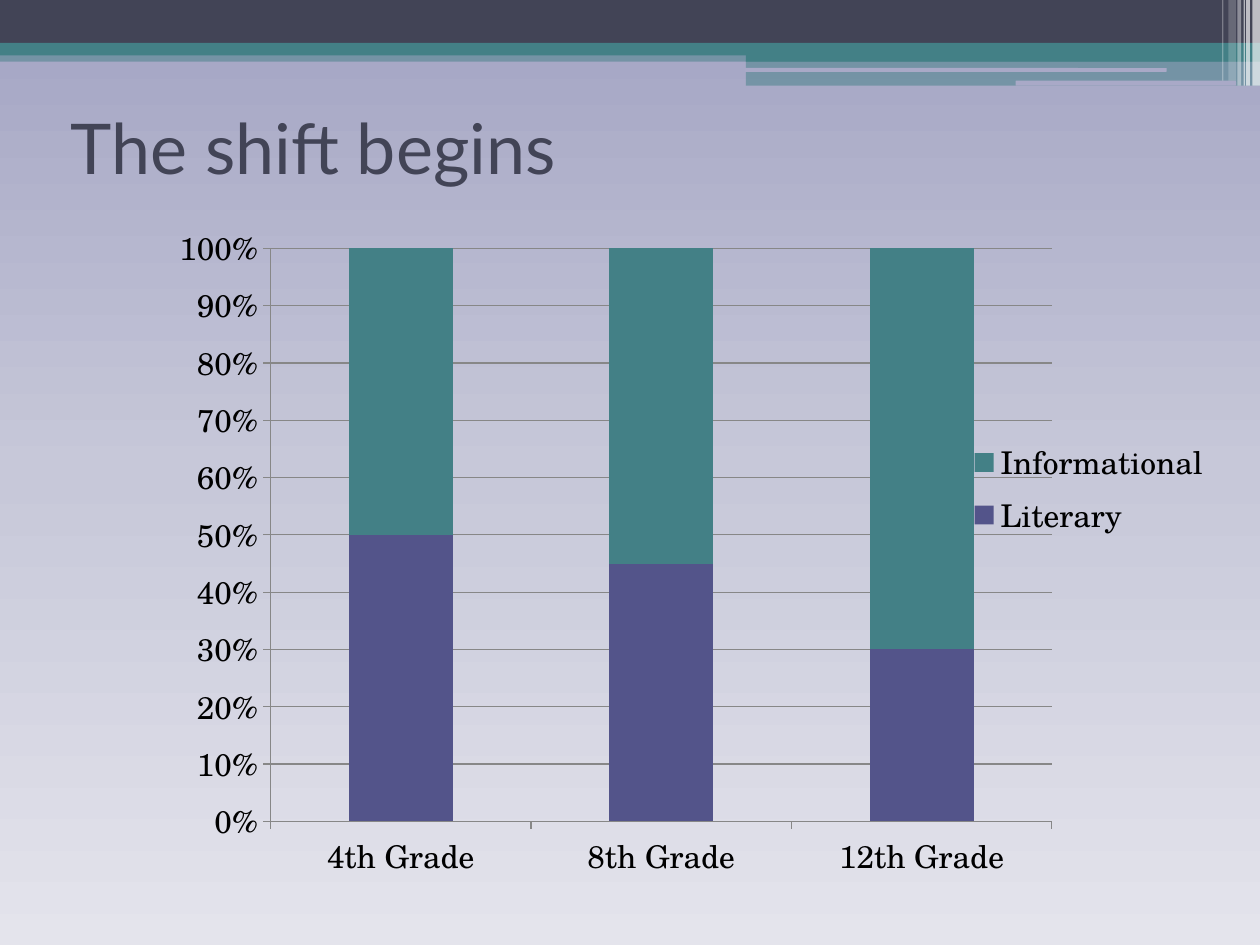
from copy import deepcopy

from lxml import etree
from pptx import Presentation
from pptx.chart.data import CategoryChartData
from pptx.dml.color import RGBColor
from pptx.enum.chart import XL_CHART_TYPE, XL_LEGEND_POSITION, XL_TICK_MARK
from pptx.enum.shapes import MSO_SHAPE
from pptx.enum.text import MSO_ANCHOR, PP_ALIGN
from pptx.oxml.ns import qn
from pptx.util import Inches, Pt

RECT, ROUND = MSO_SHAPE.RECTANGLE, MSO_SHAPE.ROUNDED_RECTANGLE
STACKED = XL_CHART_TYPE.COLUMN_STACKED_100
RIGHT = XL_LEGEND_POSITION.RIGHT
OUTSIDE = XL_TICK_MARK.OUTSIDE
LEFT, MIDDLE = PP_ALIGN.LEFT, MSO_ANCHOR.MIDDLE

COLORS = {
    "top": "A3A4C3", "mid": "C7C8D9", "low": "E4E4EC", "gap": "A9A9C7",
    "dark": "424456", "teal": "438086", "violet": "53548A",
    "white": "FFFFFF", "black": "000000", "grid": "878787",
}

# Left, top, width, height, color, opacity in percent
BANDS = [
    (0, 0.4, 10, 0.09, "teal", 50),
    (0, 0, 10, 0.34, "dark", 100),
    (0, 0.34, 10, 0.1, "teal", 100),
    (5.92, 0.39, 4.08, 0.1, "teal", 100),
    (5.92, 0.48, 4.08, 0.2, "teal", 50),
]
GAPS = [(5.91, 0.54, 3.35, 0.03), (8.06, 0.64, 1.75, 0.04)]
# Left, width, height, opacity in percent
STRIPES = [
    (9.94, 0.06, 0.68, 65), (9.89, 0.03, 0.68, 65), (9.87, 0.01, 0.68, 60),
    (9.82, 0.03, 0.68, 40), (9.75, 0.06, 0.64, 20), (9.7, 0.01, 0.64, 30),
]

GRADES = ["4th Grade", "8th Grade", "12th Grade"]
SERIES = [
    ("Literary", (50, 45, 30), "violet"),
    ("Informational", (50, 55, 70), "teal"),
]


def rgb(name):
    return RGBColor.from_string(COLORS[name])


def set_back(slide):
    fill = slide.background.fill
    fill.gradient()
    fill.gradient_angle = 270
    first = next(slide.element.iter(qn("a:gs")))
    first.addnext(deepcopy(first))
    for stop, name, place in zip(fill.gradient_stops,
                                 ("top", "mid", "low"), (0, 0.5, 1)):
        stop.color.rgb = rgb(name)
        stop.position = place


def add_bar(slide, left, top, width, height, color, opacity=100, kind=RECT):
    bar = slide.shapes.add_shape(
        kind, Inches(left), Inches(top), Inches(width), Inches(height))
    bar.shadow.inherit = False
    bar.line.fill.background()
    bar.fill.solid()
    bar.fill.fore_color.rgb = rgb(color)
    if opacity < 100:
        tint = next(bar.element.spPr.iter(qn("a:srgbClr")))
        etree.SubElement(tint, qn("a:alpha"), val=str(opacity * 1000))


def set_title(slide, text):
    title = slide.shapes.title
    title.left, title.top = Inches(0.46), Inches(0.58)
    title.width, title.height = Inches(9), Inches(1.17)
    frame = title.text_frame
    frame.text = text
    frame.vertical_anchor = MIDDLE
    para = frame.paragraphs[0]
    para.alignment = LEFT
    font = para.runs[0].font
    font.name, font.size = "Lato", Pt(40)
    font.color.rgb = rgb("dark")


def set_place(part, x, y, w, h, inner=False):
    """Fix a chart part at fractions of the chart area."""
    for old in part.findall(qn("c:layout")):
        part.remove(old)
    layout = etree.Element(qn("c:layout"))
    manual = etree.SubElement(layout, qn("c:manualLayout"))
    items = [("layoutTarget", "inner")] if inner else []
    items += [("xMode", "edge"), ("yMode", "edge"),
              ("x", x), ("y", y), ("w", w), ("h", h)]
    for tag, val in items:
        etree.SubElement(manual, qn("c:" + tag), val=str(val))
    # The layout comes first in a plot area, after the position in a legend
    spot = part.find(qn("c:legendPos"))
    if spot is None:
        part.insert(0, layout)
    else:
        spot.addnext(layout)


def add_graph(slide):
    data = CategoryChartData()
    data.categories = GRADES
    for name, vals, _ in SERIES:
        data.add_series(name, vals)
    chart = slide.shapes.add_chart(
        STACKED, Inches(1.31), Inches(1.71), Inches(8.38), Inches(5.27),
        data).chart
    chart.has_title = False
    chart.font.name, chart.font.size = "TeX Gyre Schola", Pt(18)
    chart.font.color.rgb = rgb("black")

    # Columns
    plot = chart.plots[0]
    plot.gap_width, plot.overlap = 150, 100
    plot.vary_by_categories = False
    for series, (_, _, color) in zip(plot.series, SERIES):
        series.format.fill.solid()
        series.format.fill.fore_color.rgb = rgb(color)

    # Axes and grid
    scale = chart.value_axis
    scale.minimum_scale, scale.maximum_scale, scale.major_unit = 0, 1, 0.1
    scale.has_major_gridlines = True
    scale.tick_labels.number_format = "0%"
    scale.tick_labels.number_format_is_linked = False
    for axis in (scale, chart.category_axis):
        axis.major_tick_mark = OUTSIDE
    for part in (scale, chart.category_axis, scale.major_gridlines):
        part.format.line.color.rgb = rgb("grid")
        part.format.line.width = Pt(0.75)

    # Legend and layout
    chart.has_legend = True
    legend = chart.legend
    legend.position = RIGHT
    legend.include_in_layout = False
    area = next(chart.element.iter(qn("c:plotArea")))
    set_place(area, 0.1, 0.05, 0.74, 0.87, inner=True)
    set_place(next(chart.element.iter(qn("c:legend"))), 0.76, 0.33, 0.23, 0.17)


def main():
    prs = Presentation()
    prs.slide_width, prs.slide_height = Inches(10), Inches(7.5)
    slide = prs.slides.add_slide(prs.slide_layouts[5])
    set_back(slide)

    # Header bands, gaps and corner stripes
    for band in BANDS:
        add_bar(slide, *band)
    for gap in GAPS:
        add_bar(slide, *gap, "gap", kind=ROUND)
    for left, width, height, opacity in STRIPES:
        add_bar(slide, left, 0, width, height, "white", opacity)

    set_title(slide, "The shift begins")
    add_graph(slide)
    prs.save("out.pptx")


if __name__ == "__main__":
    main()
